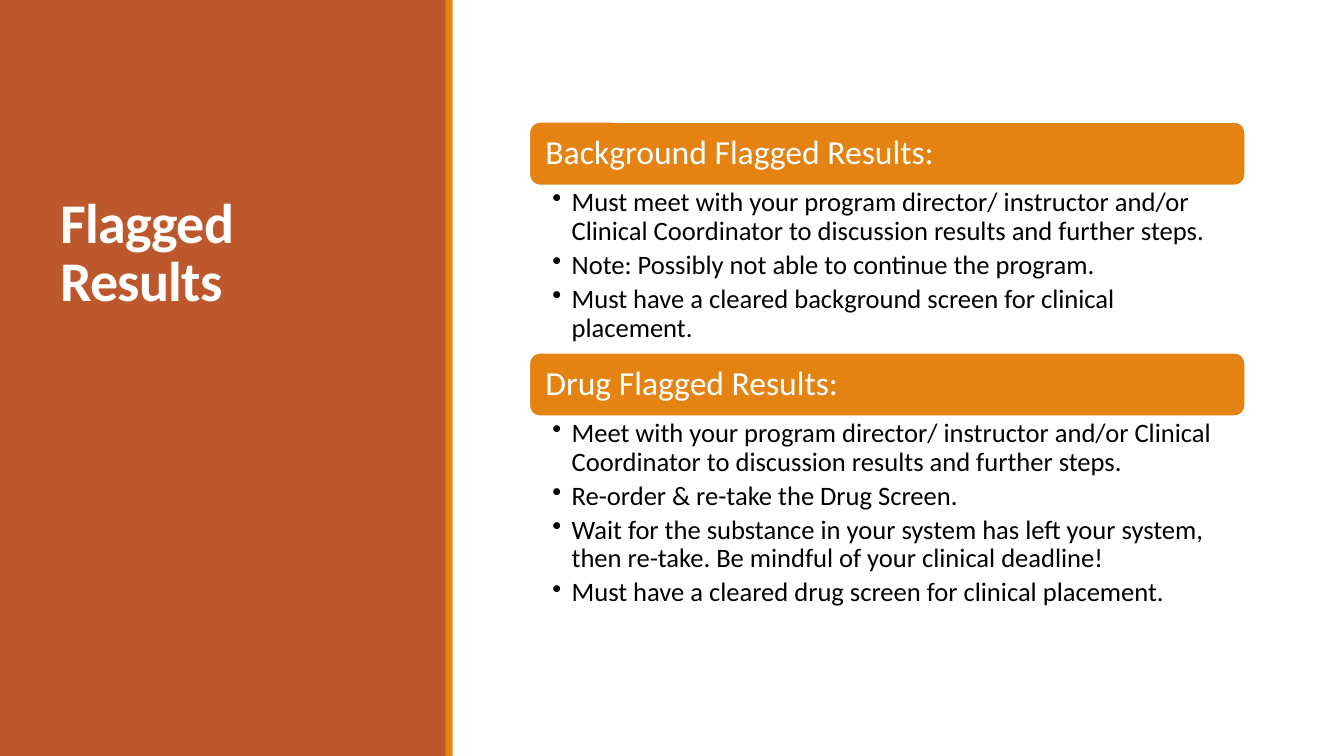
import pptx
import pptx.util
import pptx.dml.color
import pptx.enum.shapes
import pptx.enum.text
import lxml.etree
from pptx.util import Inches, Pt

TITLE = "Flagged Results"
SECTIONS = [
    {"heading": "Background Flagged Results:", "body_height": 1.66, "steps": [
        "Must meet with your program director/ instructor and/or Clinical Coordinator "
        "to discussion results and further steps.",
        "Note: Possibly not able to continue the program.",
        "Must have a cleared background screen for clinical placement.",
    ]},
    {"heading": "Drug Flagged Results:", "body_height": 2.01, "steps": [
        "Meet with your program director/ instructor and/or Clinical Coordinator "
        "to discussion results and further steps.",
        "Re-order & re-take the Drug Screen.",
        "Wait for the substance in your system has left your system, then re-take. "
        "Be mindful of your clinical deadline!",
        "Must have a cleared drug screen for clinical placement.",
    ]},
]
COLORS = {"panel": "BD582C", "accent": "E48312", "white": "FFFFFF", "black": "000000"}
FONT = "Calibri"
SECTION_LEFT, SECTION_TOP, SECTION_WIDTH = 5.25, 1.21, 7.1
HEADING_HEIGHT = 0.63
BULLET_INDENT = 0.19

SHAPES = pptx.enum.shapes.MSO_SHAPE
ANCHORS = pptx.enum.text.MSO_ANCHOR


def rgb(name):
    return pptx.dml.color.RGBColor.from_string(COLORS[name])


def add_block(slide, preset, box, fill, outline=None):
    block = slide.shapes.add_shape(preset, *map(Inches, box))
    block.shadow.inherit = False
    block.fill.solid()
    block.fill.fore_color.rgb = rgb(fill)
    if outline:
        block.line.color.rgb = rgb(outline)
        block.line.width = Pt(1.25)
    else:
        block.line.fill.background()
    return block


def write(shape, lines, size, color, insets, anchor, spacing=0.9, after=0, bold=False):
    """Fill the shape with one left-aligned paragraph per line; insets run left, top, right, bottom."""
    frame = shape.text_frame
    frame.word_wrap = True
    frame.vertical_anchor = anchor
    (frame.margin_left, frame.margin_top,
     frame.margin_right, frame.margin_bottom) = map(Inches, insets)
    frame.text = "\n".join(lines)
    for paragraph in frame.paragraphs:
        paragraph.alignment = pptx.enum.text.PP_ALIGN.LEFT
        paragraph.line_spacing = spacing
        paragraph.space_after = Pt(after)
        font = paragraph.runs[0].font
        font.name, font.size, font.bold = FONT, Pt(size), bold
        font.color.rgb = rgb(color)
    return frame.paragraphs


def add_bullet(paragraph):
    properties = paragraph._p.get_or_add_pPr()
    properties.set("marL", str(Inches(BULLET_INDENT)))
    properties.set("indent", str(-Inches(BULLET_INDENT)))
    bullet = lxml.etree.SubElement(properties, pptx.oxml.ns.qn("a:buChar"))
    bullet.set("char", "•")


def add_section(slide, section, top):
    heading = add_block(slide, SHAPES.ROUNDED_RECTANGLE,
                        (SECTION_LEFT, top, SECTION_WIDTH, HEADING_HEIGHT), "accent", "white")
    write(heading, [section["heading"]], 24, "white", (0.13, 0.1, 0.13, 0.1), ANCHORS.MIDDLE)
    body_box = (SECTION_LEFT, top + HEADING_HEIGHT, SECTION_WIDTH, section["body_height"])
    body = slide.shapes.add_textbox(*map(Inches, body_box))
    for step in write(body, section["steps"], 19, "black", (0.23, 0.03, 0.19, 0.03),
                      ANCHORS.TOP, after=3.8):
        add_bullet(step)


def main():
    deck = pptx.Presentation()
    deck.slide_width, deck.slide_height = Inches(13.33), Inches(7.5)
    slide = deck.slides.add_slide(deck.slide_layouts[6])

    add_block(slide, SHAPES.RECTANGLE, (0, 0, 4.43, 7.5), "panel")
    add_block(slide, SHAPES.RECTANGLE, (4.42, 0, 0.07, 7.5), "accent")
    title = slide.shapes.add_textbox(*map(Inches, (0.5, 0.65, 3.5, 2.5)))
    heading = write(title, [TITLE], 40, "white", (0.1, 0.05, 0.1, 0.05), ANCHORS.BOTTOM,
                    spacing=0.85, bold=True)[0]
    heading.runs[0].font._element.set("spc", "-50")

    top = SECTION_TOP
    for section in SECTIONS:
        add_section(slide, section, top)
        top += HEADING_HEIGHT + section["body_height"]

    deck.save("out.pptx")


if __name__ == "__main__":
    main()
